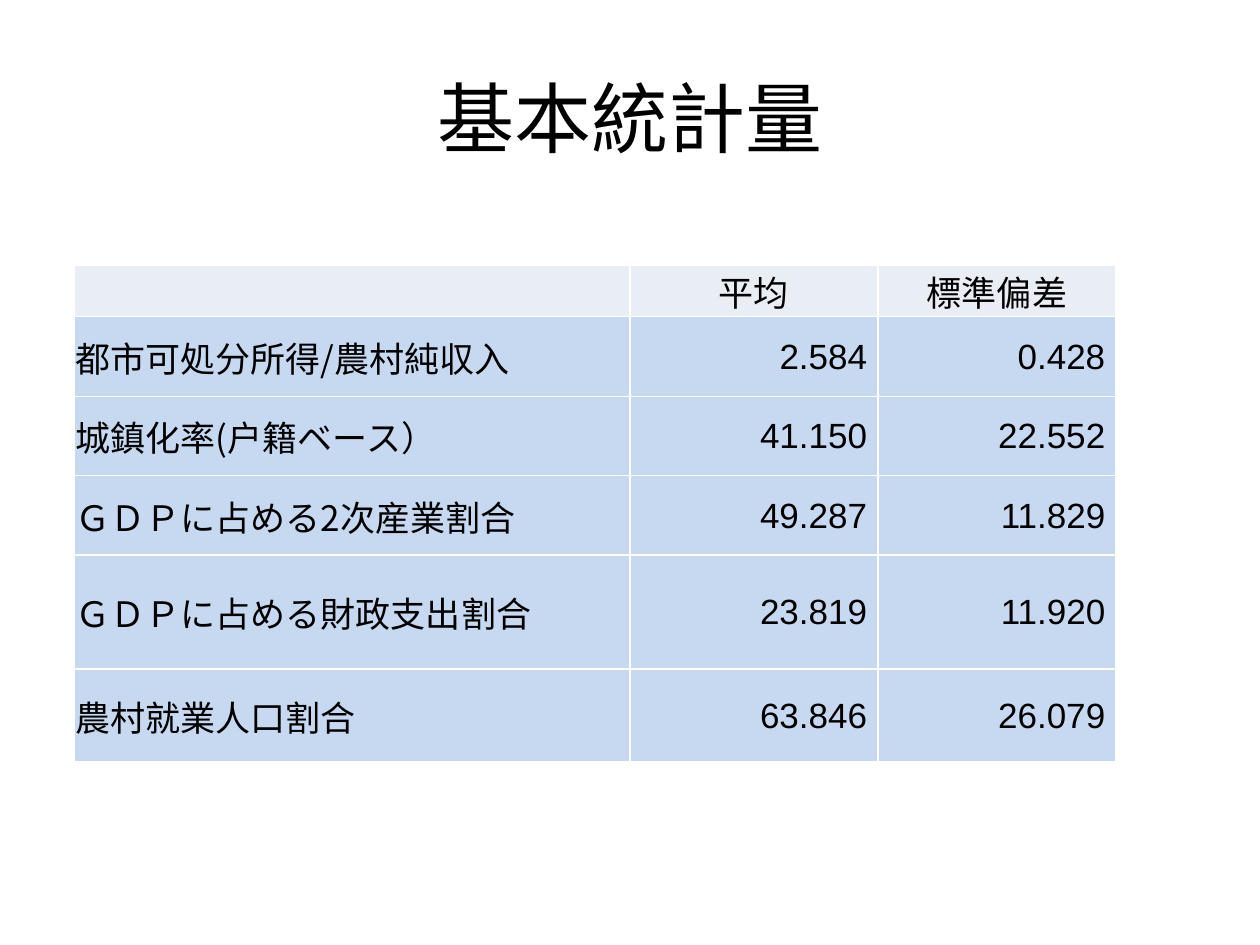
import pptx
import pptx.util
import pptx.dml.color
import pptx.enum.text
import pptx.oxml.ns
import lxml.etree

Cm = pptx.util.Cm
Pt = pptx.util.Pt
Color = pptx.dml.color.RGBColor
Align = pptx.enum.text.PP_ALIGN
Anchor = pptx.enum.text.MSO_ANCHOR
qn = pptx.oxml.ns.qn

BLACK = Color(0x00, 0x00, 0x00)
WHITE = Color(0xFF, 0xFF, 0xFF)
PALE = Color(0xE9, 0xED, 0xF4)
BLUE = Color(0xC6, 0xD9, 0xF1)
KANJI = "Noto Sans CJK JP"


def style(para, face, size, align):
    """Set the paragraph's look, with one East Asian font throughout."""
    para.alignment = align
    font = para.font
    font.name = face
    font.size = Pt(size)
    font.color.rgb = BLACK
    lxml.etree.SubElement(font._element, qn("a:ea"), typeface=KANJI)


def edge(cell):
    """Draw a thin white border on all four sides; call before filling."""
    props = cell._tc.get_or_add_tcPr()
    for side in ("lnL", "lnR", "lnT", "lnB"):
        line = lxml.etree.SubElement(props, qn("a:" + side), w=str(Pt(1)))
        fill = lxml.etree.SubElement(line, qn("a:solidFill"))
        lxml.etree.SubElement(fill, qn("a:srgbClr"), val=str(WHITE))


deck = pptx.Presentation()
deck.slide_width = Cm(25.4)
deck.slide_height = Cm(19.05)
slide = deck.slides.add_slide(deck.slide_layouts[6])

title = slide.shapes.add_textbox(Cm(1.27), Cm(0.76), Cm(22.86), Cm(3.18))
frame = title.text_frame
frame.word_wrap = True
frame.vertical_anchor = Anchor.MIDDLE
frame.text = "基本統計量"
style(frame.paragraphs[0], "Calibri", 44, Align.CENTER)

data = [
    ("", "平均", "標準偏差"),
    ("都市可処分所得/農村純収入", "2.584 ", "0.428 "),
    ("城鎮化率(戸籍ベース）", "41.150 ", "22.552 "),
    ("ＧＤＰに占める2次産業割合", "49.287 ", "11.829 "),
    ("ＧＤＰに占める財政支出割合", "23.819 ", "11.920 "),
    ("農村就業人口割合", "63.846 ", "26.079 "),
]
widths = [11.2, 5, 4.8]
heights = [1.04, 1.61, 1.6, 1.6, 2.3, 1.87]

table = slide.shapes.add_table(
    len(data), len(widths), Cm(1.5), Cm(5.34),
    Cm(sum(widths)), Cm(sum(heights))).table
for col, width in zip(table.columns, widths):
    col.width = Cm(width)

for r, (row, height) in enumerate(zip(data, heights)):
    table.rows[r].height = Cm(height)
    for c, text in enumerate(row):
        cell = table.cell(r, c)
        edge(cell)
        cell.fill.solid()
        cell.fill.fore_color.rgb = PALE if r == 0 else BLUE
        cell.margin_left = cell.margin_right = cell.margin_top = Cm(0.02)
        cell.margin_bottom = 0
        cell.vertical_anchor = Anchor.MIDDLE
        cell.text = text
        if r == 0:
            face, align = "Calibri", Align.CENTER
        elif c == 0:
            face, align = KANJI, Align.LEFT
        else:
            face, align = "Arial", Align.RIGHT
        para = cell.text_frame.paragraphs[0]
        style(para, face, 20, align)
        para.font.bold = False

deck.save("out.pptx")
